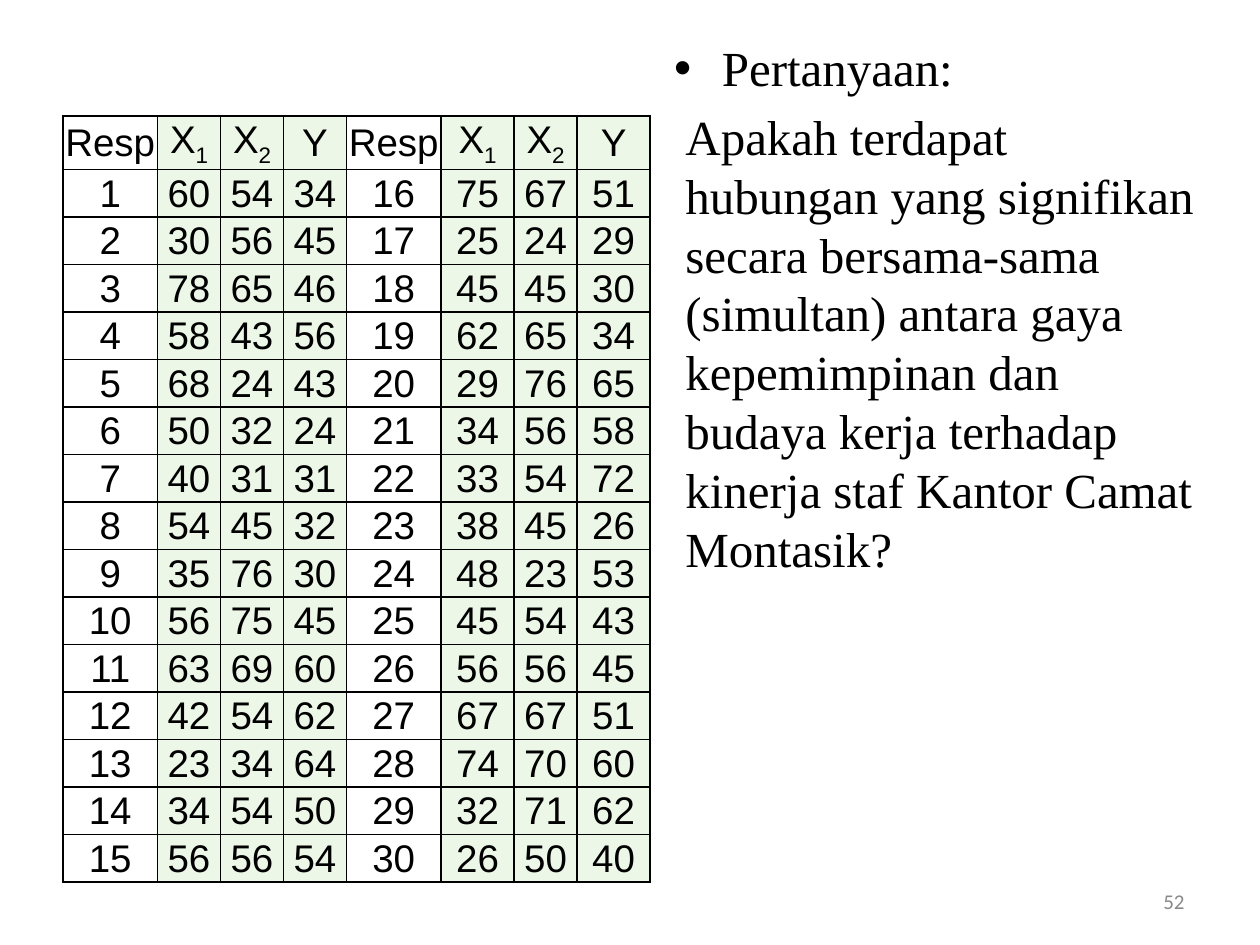
import pptx
import pptx.util
import pptx.dml.color
import pptx.enum.text
import pptx.oxml

Inches = pptx.util.Inches
Pt = pptx.util.Pt
COLORS = {"text": "000000", "white": "FFFFFF", "green": "ECF7E8", "number": "898989"}


def format_runs(para, font_name, size, color):
    for span in para.runs:
        span.font.name = font_name
        span.font.size = Pt(size)
        span.font.color.rgb = pptx.dml.color.RGBColor.from_string(COLORS[color])


def add_borders(cell):
    properties = cell._tc.get_or_add_tcPr()
    for position, side in enumerate(("lnL", "lnR", "lnT", "lnB")):
        border = pptx.oxml.parse_xml(
            f'<a:{side} xmlns:a="http://schemas.openxmlformats.org/drawingml/2006/main" w="12700">'
            f'<a:solidFill><a:srgbClr val="{COLORS["text"]}"/></a:solidFill></a:{side}>'
        )
        properties.insert(position, border)


deck = pptx.Presentation()
deck.slide_width = Inches(10)
deck.slide_height = Inches(7.5)
page = deck.slides.add_slide(deck.slide_layouts[1])
title = page.shapes.title
title.element.getparent().remove(title.element)

question = page.placeholders[1]
question.left, question.top = Inches(5.25), Inches(0.25)
question.width, question.height = Inches(4.42), Inches(6.53)
frame = question.text_frame
frame.auto_size = pptx.enum.text.MSO_AUTO_SIZE.NONE
frame.text = (
    "Pertanyaan:\n"
    "Apakah terdapat hubungan yang signifikan secara bersama-sama (simultan) "
    "antara gaya kepemimpinan dan budaya kerja terhadap kinerja staf Kantor Camat Montasik?"
)
layouts = [(0.38, -0.38, '<a:buChar {} char="•"/>'), (0.09, 0, "<a:buNone {}/>")]
for para, (margin, indent, bullet) in zip(frame.paragraphs, layouts):
    properties = para._p.get_or_add_pPr()
    properties.set("marL", str(Inches(margin)))
    properties.set("indent", str(Inches(indent)))
    namespace = 'xmlns:a="http://schemas.openxmlformats.org/drawingml/2006/main"'
    properties.append(pptx.oxml.parse_xml(bullet.format(namespace)))
    format_runs(para, "Times New Roman", 28, "text")

number_box = page.shapes.add_textbox(Inches(7.17), Inches(6.95), Inches(2.33), Inches(0.4))
number_box.text_frame.word_wrap = True
number_box.text_frame.vertical_anchor = pptx.enum.text.MSO_ANCHOR.MIDDLE
number_box.text_frame.text = "52"
number_para = number_box.text_frame.paragraphs[0]
number_para.alignment = pptx.enum.text.PP_ALIGN.RIGHT
format_runs(number_para, "Calibri", 12, "number")

scores = [
    (60, 54, 34), (30, 56, 45), (78, 65, 46), (58, 43, 56), (68, 24, 43),
    (50, 32, 24), (40, 31, 31), (54, 45, 32), (35, 76, 30), (56, 75, 45),
    (63, 69, 60), (42, 54, 62), (23, 34, 64), (34, 54, 50), (56, 56, 54),
    (75, 67, 51), (25, 24, 29), (45, 45, 30), (62, 65, 34), (29, 76, 65),
    (34, 56, 58), (33, 54, 72), (38, 45, 26), (48, 23, 53), (45, 54, 43),
    (56, 56, 45), (67, 67, 51), (74, 70, 60), (32, 71, 62), (26, 50, 40),
]
half = len(scores) // 2
rows = [["Resp", "X1", "X2", "Y"] * 2]
for index in range(half):
    rows.append([index + 1, *scores[index], index + half + 1, *scores[index + half]])

widths = [0.75, 0.5, 0.5, 0.5, 0.75, 0.58, 0.5, 0.58]
table = page.shapes.add_table(
    len(rows), len(widths), Inches(0.5), Inches(0.92), Inches(4.67), Inches(6.01)
).table
table.first_row = False
table.horz_banding = False
for column, width in zip(table.columns, widths):
    column.width = Inches(width)

for row_index, values in enumerate(rows):
    for column_index, value in enumerate(values):
        cell = table.cell(row_index, column_index)
        cell.margin_left = cell.margin_right = cell.margin_top = Inches(0.01)
        cell.margin_bottom = 0
        cell.vertical_anchor = pptx.enum.text.MSO_ANCHOR.MIDDLE
        fill = "white" if column_index % 4 == 0 else "green"
        cell.fill.solid()
        cell.fill.fore_color.rgb = pptx.dml.color.RGBColor.from_string(COLORS[fill])
        add_borders(cell)
        para = cell.text_frame.paragraphs[0]
        para.alignment = pptx.enum.text.PP_ALIGN.CENTER
        label = str(value)
        if label.startswith("X"):
            para.add_run().text = label[0]
            subscript = para.add_run()
            subscript.text = label[1]
            subscript.font._element.set("baseline", "-25000")
        else:
            para.add_run().text = label
        format_runs(para, "Arial", 22, "text")

deck.save("out.pptx")
